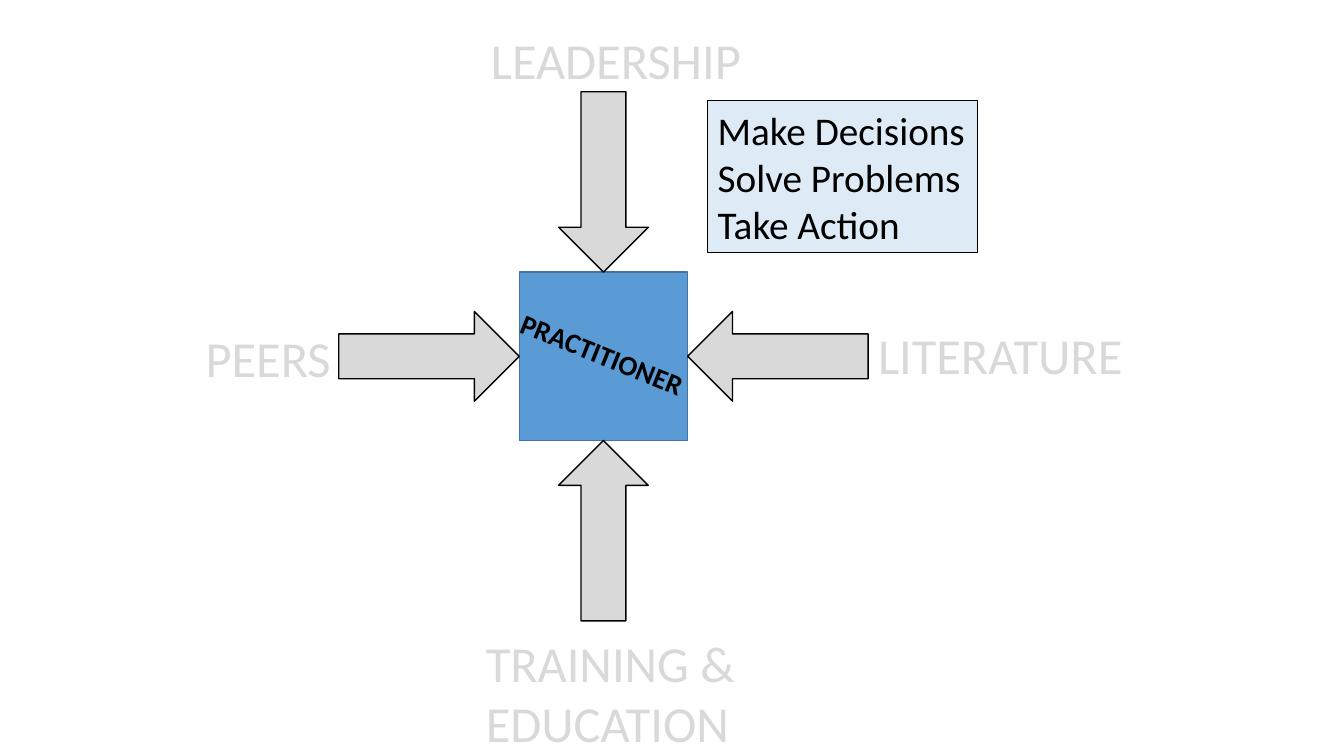
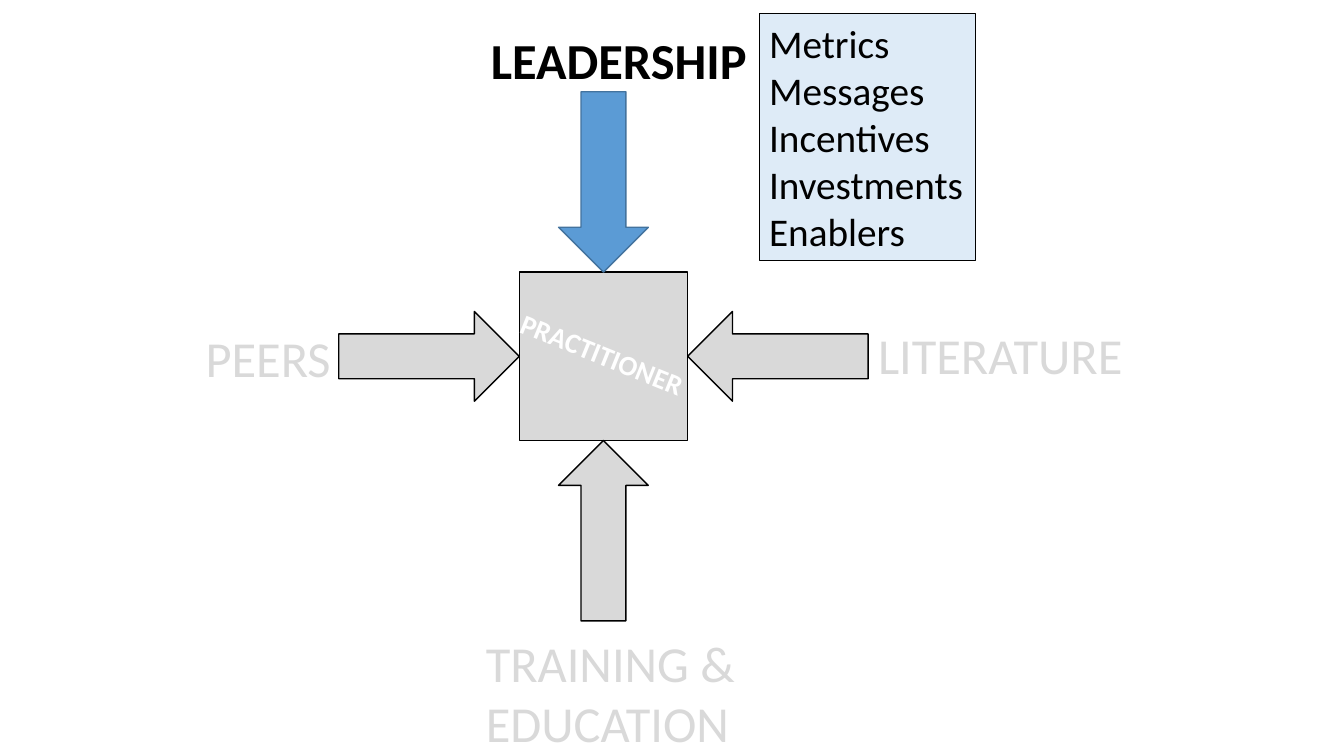
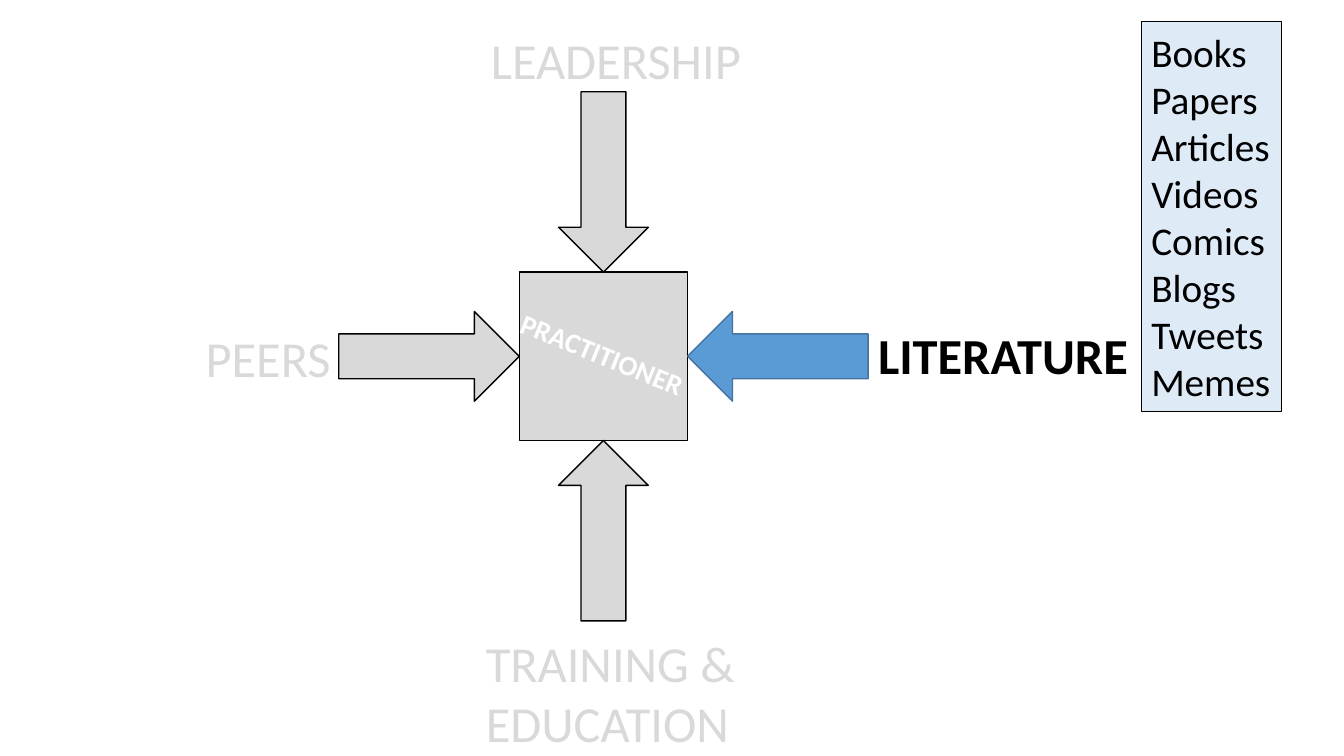
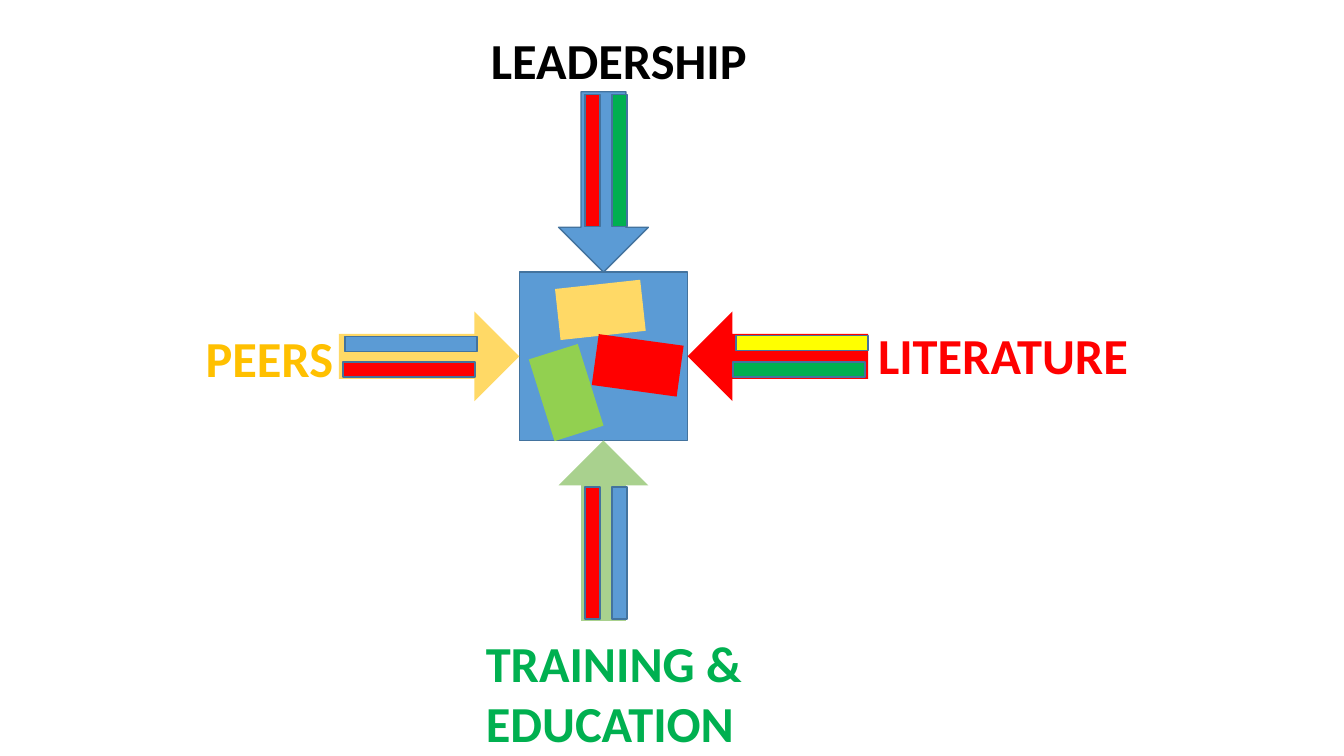
from pptx import Presentation
from pptx.dml.color import RGBColor
from pptx.enum.shapes import MSO_SHAPE
from pptx.enum.text import MSO_AUTO_SIZE, PP_ALIGN
from pptx.util import Inches, Pt

BLACK, WHITE, GREY = "000000", "FFFFFF", "D9D9D9"
BLUE, DARK_BLUE, PALE_BLUE = "5B9BD5", "43739E", "DEEBF7"
RED, GREEN, LIME, SAGE = "FF0000", "00B050", "92D050", "A9D18E"
SAND, AMBER, YELLOW = "FFD966", "FFC000", "FFFF00"
OUTLINES = {GREY: BLACK, BLUE: DARK_BLUE}


def add_box(shapes, kind, at, fill, line=None, rotation=0, weight=1):
    sp = shapes.add_shape(kind, *map(Inches, at))
    sp.shadow.inherit = False
    sp.rotation = rotation
    sp.fill.solid()
    sp.fill.fore_color.rgb = RGBColor.from_string(fill)
    if line:
        sp.line.color.rgb = RGBColor.from_string(line)
        sp.line.width = Pt(weight)
    else:
        sp.line.fill.background()
    return sp


def set_text(sp, lines, size, color, bold=False):
    tf = sp.text_frame
    tf.word_wrap = False
    tf.auto_size = MSO_AUTO_SIZE.SHAPE_TO_FIT_TEXT
    tf.text = "\n".join(lines)
    for p in tf.paragraphs:
        p.alignment = PP_ALIGN.LEFT
        p.font.name = "Calibri"
        p.font.size = Pt(size)
        p.font.bold = bold
        p.font.color.rgb = RGBColor.from_string(color)


# Hub square, with one arrow touching the middle of each side
HUB_X, HUB_Y, HUB = 5.15, 2.7, 1.67
LENGTH, BREADTH = 1.79, 0.89
across_x = HUB_X + (HUB - BREADTH) / 2
across_y = HUB_Y + (HUB - BREADTH) / 2
RIGHT, DOWN = MSO_SHAPE.RIGHT_ARROW, MSO_SHAPE.DOWN_ARROW

# name: arrow kind, arrow position and size, rotation, label lines, label box
influences = {
    "peers": (RIGHT, (HUB_X - LENGTH, across_y, LENGTH, BREADTH), 0,
              ["PEERS"], (1.94, 3.2, 1.48, 0.71)),
    "leadership": (DOWN, (across_x, HUB_Y - LENGTH, BREADTH, LENGTH), 0,
                   ["LEADERSHIP"], (4.77, 0.24, 2.77, 0.71)),
    "literature": (RIGHT, (HUB_X + HUB, across_y, LENGTH, BREADTH), 180,
                   ["LITERATURE"], (8.61, 3.17, 2.71, 0.71)),
    "training": (DOWN, (across_x, HUB_Y + HUB, BREADTH, LENGTH), 180,
                 ["TRAINING &", "EDUCATION"], (4.72, 6.22, 2.89, 1.31)),
}

# Each slide: hub fill, hub text colour, highlighted influences as
# name: (arrow fill, label colour), then the callout's box and lines
slides = [
    (BLUE, BLACK, {}, (7.02, 1, 2.68, 1.51),
     ["Make Decisions", "Solve Problems", "Take Action"]),
    (GREY, WHITE, {"leadership": (BLUE, BLACK)}, (7.53, 0.13, 2.15, 2.46),
     ["Metrics", "Messages", "Incentives", "Investments", "Enablers"]),
    (GREY, WHITE, {"literature": (BLUE, BLACK)}, (11.32, 0.21, 1.39, 3.87),
     ["Books", "Papers", "Articles", "Videos", "Comics", "Blogs", "Tweets",
      "Memes"]),
    (BLUE, None, {"peers": (SAND, AMBER), "leadership": (BLUE, BLACK),
                  "literature": (RED, RED), "training": (SAGE, GREEN)},
     None, []),
]

prs = Presentation()
prs.slide_width, prs.slide_height = Inches(13.33), Inches(7.5)

for hub_fill, hub_text, highlights, callout_at, callout_lines in slides:
    s = prs.slides.add_slide(prs.slide_layouts[6])
    diagram = s.shapes.add_group_shape().shapes
    add_box(diagram, MSO_SHAPE.RECTANGLE, (HUB_X, HUB_Y, HUB, HUB), hub_fill,
            OUTLINES[hub_fill])
    for name, (kind, at, rotation, _, _) in influences.items():
        fill, _ = highlights.get(name, (GREY, GREY))
        add_box(diagram, kind, at, fill, OUTLINES.get(fill), rotation)
    for name, (_, _, _, lines, at) in influences.items():
        _, color = highlights.get(name, (GREY, GREY))
        label = diagram.add_textbox(*map(Inches, at))
        set_text(label, lines, 36, color, name in highlights)
    if hub_text:
        label = diagram.add_textbox(*map(Inches, (5.02, 3.3, 1.92, 0.44)))
        label.rotation = 22
        set_text(label, ["PRACTITIONER"], 20, hub_text, True)
    if callout_lines:
        callout = add_box(s.shapes, MSO_SHAPE.RECTANGLE, callout_at, PALE_BLUE,
                          BLACK, weight=0.75)
        set_text(callout, callout_lines, 28, BLACK)

# Last slide: loose pieces in the hub and stripes along the arrows
pieces = [(5.53, 2.82, 353.8, SAND), (5.9, 3.37, 7.8, RED),
          (5.19, 3.64, 72.5, LIME)]
for x, y, rotation, fill in pieces:
    add_box(s.shapes, MSO_SHAPE.RECTANGLE, (x, y, 0.85, 0.51), fill,
            rotation=rotation)

stripes = [
    (3.42, 3.34, 0, BLUE), (3.4, 3.59, 0, RED),
    (7.3, 3.33, 0, YELLOW), (7.27, 3.59, 0, GREEN),
    (5.49, 5.41, 90, BLUE), (5.22, 5.41, 90, RED),
    (5.49, 1.52, 90, GREEN), (5.22, 1.52, 90, RED),
]
for x, y, rotation, fill in stripes:
    add_box(s.shapes, MSO_SHAPE.RECTANGLE, (x, y, 1.31, 0.15), fill, DARK_BLUE,
            rotation)

prs.save("out.pptx")
